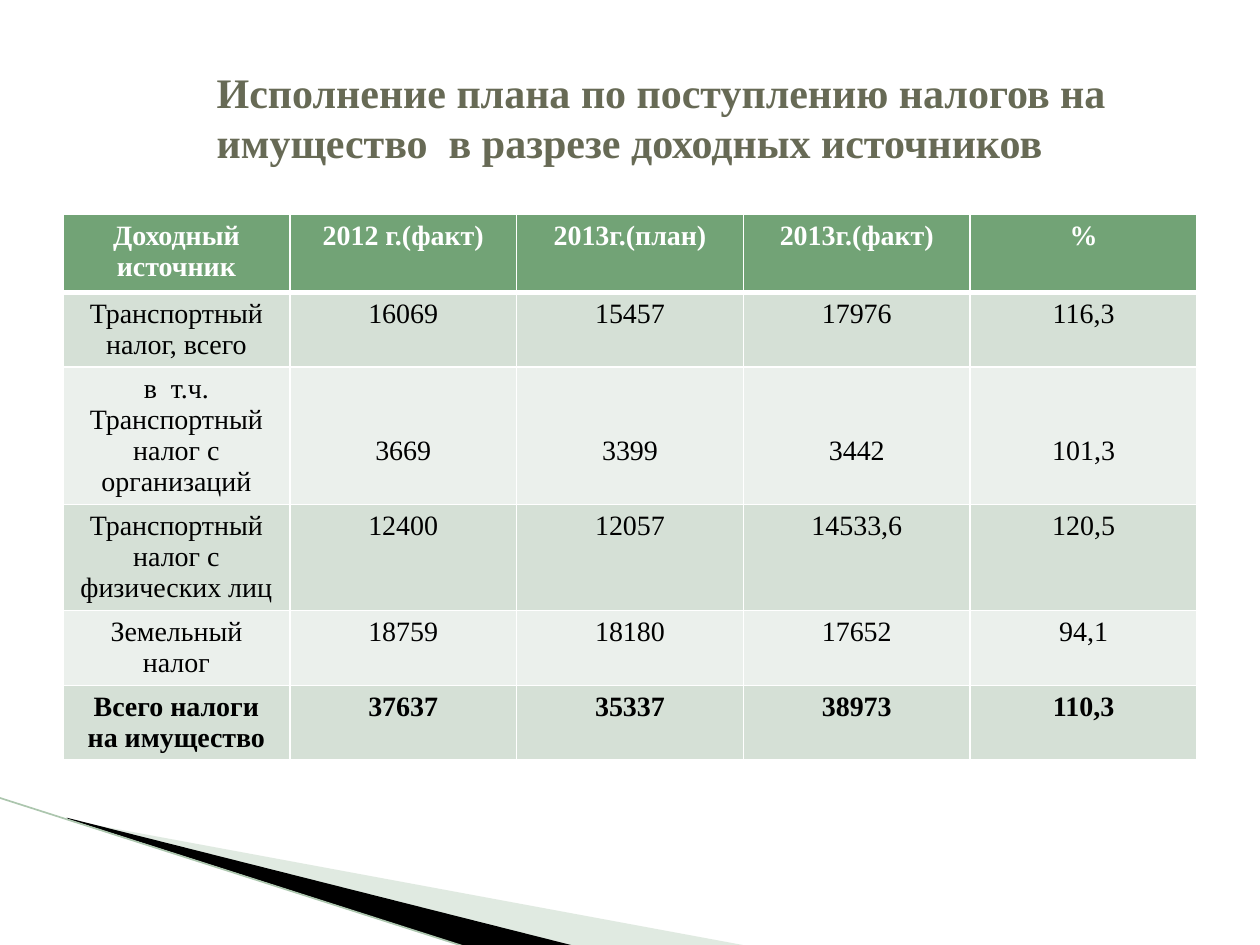
from lxml import etree
from pptx import Presentation
from pptx.dml.color import RGBColor
from pptx.enum.shapes import MSO_CONNECTOR
from pptx.enum.text import MSO_ANCHOR, PP_ALIGN
from pptx.oxml.ns import qn
from pptx.util import Inches, Pt

STRAIGHT = MSO_CONNECTOR.STRAIGHT
CENTER, LEFT = PP_ALIGN.CENTER, PP_ALIGN.LEFT
MIDDLE = MSO_ANCHOR.MIDDLE
FONT = "Times New Roman"

WHITE = RGBColor(0xFF, 0xFF, 0xFF)
BLACK = RGBColor(0, 0, 0)
OLIVE = RGBColor(0x67, 0x6A, 0x55)
GREEN = RGBColor(0x72, 0xA3, 0x76)
BAND_DARK = RGBColor(0xD5, 0xE0, 0xD6)
BAND_LIGHT = RGBColor(0xEB, 0xF0, 0xEC)
WEDGE_GREEN = RGBColor(0xB3, 0xCB, 0xB5)
EDGE_GREEN = RGBColor(0xAC, 0xC6, 0xAE)

TAX_ROWS = [
    ("Доходный источник", "2012 г.(факт)", "2013г.(план)", "2013г.(факт)", "%"),
    ("Транспортный налог, всего", "16069", "15457", "17976", "116,3"),
    ("в  т.ч.\nТранспортный налог с организаций", "3669", "3399", "3442", "101,3"),
    ("Транспортный налог с физических лиц", "12400", "12057", "14533,6", "120,5"),
    ("Земельный налог", "18759", "18180", "17652", "94,1"),
    ("Всего налоги на имущество", "37637", "35337", "38973", "110,3"),
]
ROW_HEIGHTS = (0.62, 0.59, 1.09, 0.84, 0.59, 0.59)
ORGANIZATIONS_ROW = 2
TOTAL_ROW = len(TAX_ROWS) - 1


def write_text(frame, text, size=16, color=BLACK, bold=False, align=CENTER):
    frame.word_wrap = True
    frame.text = text
    for paragraph in frame.paragraphs:
        paragraph.alignment = align
        font = paragraph.runs[0].font
        font.name, font.size, font.bold = FONT, Pt(size), bold
        font.color.rgb = color


def add_wedge(slide, points, color, opacity=100):
    corners = [(Inches(x), Inches(y)) for x, y in points]
    builder = slide.shapes.build_freeform(*corners[0])
    builder.add_line_segments(corners[1:], close=True)
    wedge = builder.convert_to_shape()
    wedge.shadow.inherit = False
    wedge.fill.solid()
    wedge.fill.fore_color.rgb = color
    wedge.line.fill.background()
    if opacity < 100:
        tint = wedge.fill._xPr.find(".//" + qn("a:srgbClr"))
        etree.SubElement(tint, qn("a:alpha"), val=str(opacity * 1000))


def add_corner(slide, left, top):
    def at(*offsets):
        return [(left + x, top + y) for x, y in offsets]

    add_wedge(slide, at((0.55, 0.18), (5.95, 1.18), (4.56, 1.18), (0.55, 0.17)),
              WEDGE_GREEN, opacity=40)
    add_wedge(slide, at((0.53, 0.16), (4.57, 1.18), (3.72, 1.19), (0.54, 0.17)), BLACK)
    start, end = at((-0.01, 0), (3.71, 1.19))
    edge = slide.shapes.add_connector(STRAIGHT, *map(Inches, start + end))
    edge.line.color.rgb = EDGE_GREEN
    edge.line.width = Pt(0.95)
    etree.SubElement(edge._element.spPr, qn("a:effectLst"))


def place_title(slide, left, top, width, height):
    title = slide.shapes.title
    title.left, title.top = Inches(left), Inches(top)
    title.width, title.height = Inches(width), Inches(height)
    frame = title.text_frame
    frame.vertical_anchor = MIDDLE
    frame.margin_left = Inches(1.22)
    write_text(frame, "Исполнение плана по поступлению налогов на "
               "имущество  в разрезе доходных источников",
               size=24, color=OLIVE, bold=True, align=LEFT)


def set_borders(cell, **widths):
    properties = cell._tc.get_or_add_tcPr()
    for side in "LRTB":
        border = etree.SubElement(properties, qn("a:ln" + side),
                                  w=str(Pt(widths.get(side, 1))))
        fill = etree.SubElement(border, qn("a:solidFill"))
        etree.SubElement(fill, qn("a:srgbClr"), val=str(WHITE))


def add_tax_table(slide, left, top, width):
    columns = len(TAX_ROWS[0])
    table = slide.shapes.add_table(
        len(TAX_ROWS), columns, Inches(left), Inches(top),
        Inches(width), Inches(sum(ROW_HEIGHTS))).table
    for column in table.columns:
        column.width = Inches(width / columns)
    for row, texts in enumerate(TAX_ROWS):
        table.rows[row].height = Inches(ROW_HEIGHTS[row])
        header = row == 0
        band = BAND_DARK if row % 2 else BAND_LIGHT
        for column, text in enumerate(texts):
            cell = table.cell(row, column)
            set_borders(cell, T=3 if row == 1 else 1, B=3 if header else 1)
            cell.fill.solid()
            cell.fill.fore_color.rgb = GREEN if header else band
            if row == ORGANIZATIONS_ROW and column > 0:
                cell.margin_top = Inches(0.54)
            write_text(cell.text_frame, text, color=WHITE if header else BLACK,
                       bold=row in (0, TOTAL_ROW))


def main():
    presentation = Presentation()
    presentation.slide_width, presentation.slide_height = Inches(10), Inches(7.5)
    slide = presentation.slides.add_slide(presentation.slide_layouts[5])
    add_corner(slide, 0, 6.33)
    place_title(slide, 0.5, 0.3, 9, 1.25)
    add_tax_table(slide, 0.5, 1.7, 9)
    presentation.save("out.pptx")


if __name__ == "__main__":
    main()
